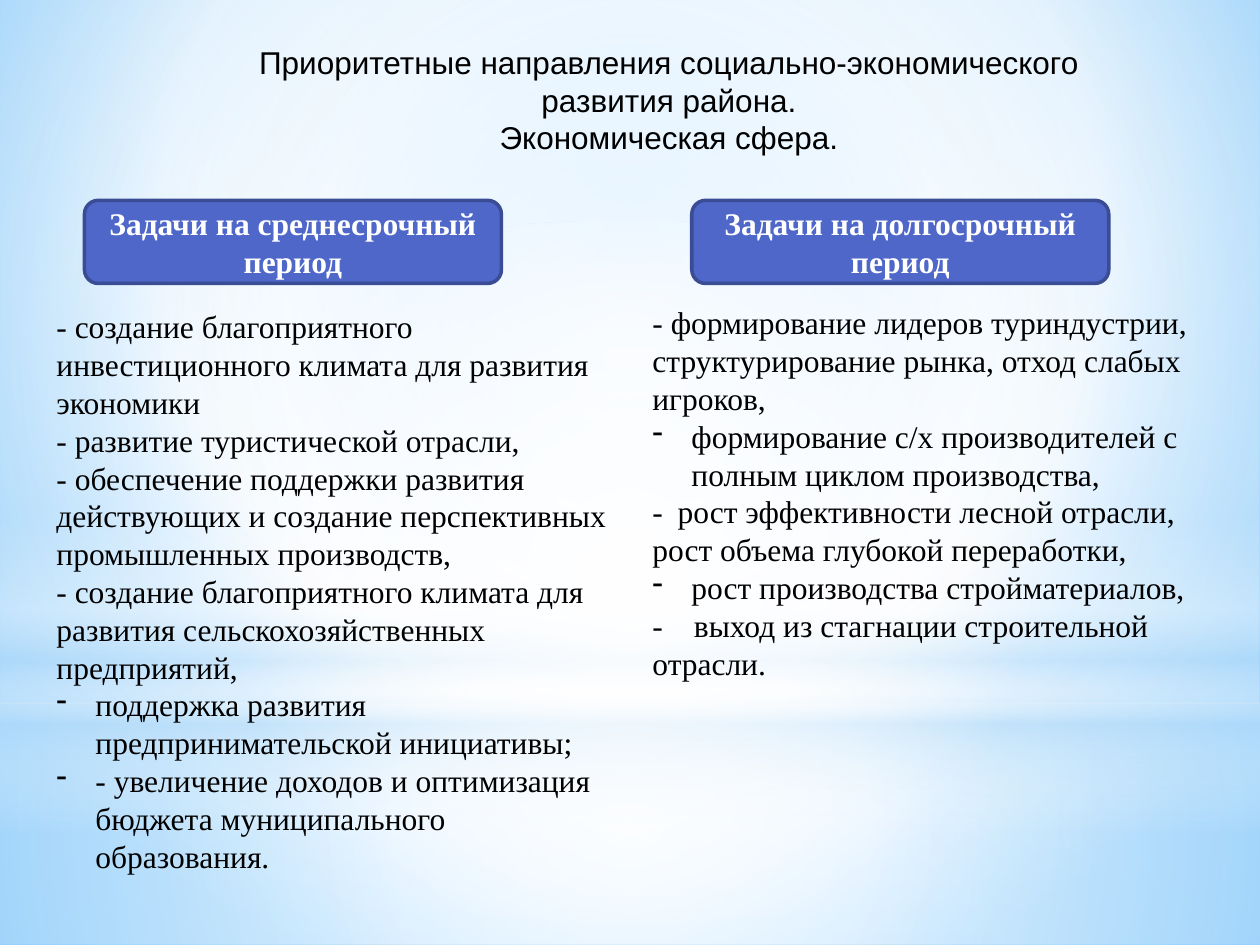
"""Build the slide on priority directions of the district's economic development."""
from dataclasses import dataclass
from typing import NamedTuple, Optional

from lxml.etree import SubElement
from pptx import Presentation
from pptx.dml.color import RGBColor
from pptx.enum.shapes import MSO_SHAPE as Preset
from pptx.enum.text import MSO_ANCHOR as Anchor, MSO_AUTO_SIZE as AutoSize, PP_ALIGN as Align
from pptx.oxml.ns import qn
from pptx.util import Inches, Pt


@dataclass(frozen=True)
class Theme:
    ink: str = "000000"
    white: str = "FFFFFF"
    sky: str = "B4DCFA"
    sky_light: str = "9ED5FF"
    sky_deep: str = "5BB9FF"
    header_fill: str = "4E67C8"
    header_line: str = "3A4C94"
    title_font: str = "Arial"
    body_font: str = "Times New Roman"
    size: int = 18


class Box(NamedTuple):
    left: float
    top: float
    width: float
    height: float


class Stop(NamedTuple):
    position: int
    color: str
    opacity: int = 100


class Gradient(NamedTuple):
    stops: tuple[Stop, ...]
    focus: Optional[tuple[int, int, int, int]] = (50, 50, 50, 50)


class Glow(NamedTuple):
    preset: Preset
    box: Box
    gradient: Gradient


class Task(NamedTuple):
    text: str
    bulleted: bool = False
    tab: Optional[float] = None


class Column(NamedTuple):
    header: str
    header_left: float
    box: Box
    tasks: tuple[Task, ...]


THEME = Theme()
HANGING = 0.31
BACKDROP = Gradient(
    (Stop(0, THEME.sky_light), Stop(60, THEME.white), Stop(100, THEME.sky_deep)),
    (20, 10, 20, 60),
)
GLOWS = (
    Glow(Preset.RECTANGLE, Box(0, 5.58, 10, 1.92), Gradient(
        (Stop(0, THEME.white, 91), Stop(37, THEME.white, 76), Stop(100, THEME.sky, 79)))),
    Glow(Preset.RECTANGLE, Box(0, 0, 10, 5.58), Gradient(
        (Stop(0, THEME.white, 89), Stop(48, THEME.white, 62), Stop(100, THEME.sky, 79)))),
    Glow(Preset.RECTANGLE, Box(0, 4.12, 10, 2.5), Gradient(
        (Stop(0, THEME.white, 0), Stop(29, THEME.white, 30), Stop(45, THEME.sky, 40),
         Stop(55, THEME.white, 26), Stop(65, THEME.sky, 60), Stop(100, THEME.white, 0)), None)),
    Glow(Preset.OVAL, Box(0, 1.75, 10, 5.58), Gradient(
        (Stop(0, THEME.white), Stop(56, THEME.white, 0)))),
)
TITLE = (
    "Приоритетные направления социально-экономического развития района.",
    "Экономическая сфера.",
)
COLUMNS = (
    Column("Задачи на среднесрочный период", 0.67, Box(0.35, 2.39, 4.57, 4.65), (
        Task("- создание благоприятного инвестиционного климата для развития экономики"),
        Task("- развитие туристической отрасли,"),
        Task("- обеспечение поддержки развития действующих и создание перспективных "
             "промышленных производств,"),
        Task("- создание благоприятного климата для развития сельскохозяйственных предприятий,"),
        Task("поддержка развития предпринимательской инициативы;", bulleted=True),
        Task("- увеличение доходов и оптимизация бюджета муниципального образования.",
             bulleted=True),
    )),
    Column("Задачи на долгосрочный период", 5.49, Box(5.08, 2.36, 4.76, 3.13), (
        Task("- формирование лидеров туриндустрии, структурирование рынка, отход слабых игроков,"),
        Task("формирование с/х производителей с полным циклом производства,", bulleted=True),
        Task("-\tрост эффективности лесной отрасли, рост объема глубокой переработки,", tab=0.2),
        Task("рост производства стройматериалов,", bulleted=True),
        Task("-\tвыход из стагнации строительной отрасли.", tab=0.33),
    )),
)


def lengths(box: Box) -> list[Inches]:
    """Convert a box to slide lengths."""
    return [Inches(value) for value in box]


def apply_gradient(properties, gradient: Gradient) -> None:
    """Turn the solid fill in the given properties into a gradient."""
    solid = properties.find(qn("a:solidFill"))
    fill = properties.makeelement(qn("a:gradFill"), {"rotWithShape": "1"})
    properties.replace(solid, fill)
    stop_list = SubElement(fill, qn("a:gsLst"))
    for stop in gradient.stops:
        mark = SubElement(stop_list, qn("a:gs"), pos=str(stop.position * 1000))
        color = SubElement(mark, qn("a:srgbClr"), val=stop.color)
        if stop.opacity < 100:
            SubElement(color, qn("a:alpha"), val=str(stop.opacity * 1000))
    if gradient.focus is None:
        SubElement(fill, qn("a:lin"), ang="5400000", scaled="0")
        return
    circle = SubElement(fill, qn("a:path"), path="circle")
    edges = {side: str(share * 1000) for side, share in zip("ltrb", gradient.focus)}
    SubElement(circle, qn("a:fillToRect"), edges)


def add_glow(slide, glow: Glow) -> None:
    """Draw one soft background layer."""
    layer = slide.shapes.add_shape(glow.preset, *lengths(glow.box))
    layer.shadow.inherit = False
    layer.line.fill.background()
    layer.fill.solid()
    apply_gradient(layer.element.spPr, glow.gradient)


def add_run(paragraph, text: str, font: str, color: str, bold: bool = False) -> None:
    """Append a formatted run."""
    run = paragraph.add_run()
    run.text = text
    run.font.name = font
    run.font.size = Pt(THEME.size)
    run.font.bold = bold
    run.font.color.rgb = RGBColor.from_string(color)


def add_text(slide, box: Box, tasks: tuple[Task, ...], font: str, align: Align) -> None:
    """Write paragraphs with optional hanging bullets or tab stops."""
    frame = slide.shapes.add_textbox(*lengths(box)).text_frame
    frame.word_wrap = True
    frame.auto_size = AutoSize.SHAPE_TO_FIT_TEXT
    for index, task in enumerate(tasks):
        paragraph = frame.add_paragraph() if index else frame.paragraphs[0]
        paragraph.alignment = align
        properties = paragraph._p.get_or_add_pPr()
        if task.bulleted:
            properties.set("marL", str(Inches(HANGING)))
            properties.set("indent", str(-Inches(HANGING)))
            SubElement(properties, qn("a:buFontTx"))
            SubElement(properties, qn("a:buChar"), char="-")
        if task.tab is not None:
            tabs = SubElement(properties, qn("a:tabLst"))
            SubElement(tabs, qn("a:tab"), pos=str(Inches(task.tab)), algn="l")
        add_run(paragraph, task.text, font, THEME.ink)


def add_column(slide, column: Column) -> None:
    """Draw a period header and its list of tasks."""
    add_text(slide, column.box, column.tasks, THEME.body_font, Align.LEFT)
    header = slide.shapes.add_shape(
        Preset.ROUNDED_RECTANGLE, *lengths(Box(column.header_left, 1.59, 3.31, 0.66)))
    header.shadow.inherit = False
    header.fill.solid()
    header.fill.fore_color.rgb = RGBColor.from_string(THEME.header_fill)
    header.line.color.rgb = RGBColor.from_string(THEME.header_line)
    header.line.width = Pt(2)
    frame = header.text_frame
    frame.word_wrap = True
    frame.vertical_anchor = Anchor.MIDDLE
    frame.paragraphs[0].alignment = Align.CENTER
    add_run(frame.paragraphs[0], column.header, THEME.body_font, THEME.white, bold=True)


def main() -> None:
    """Assemble and save the slide."""
    deck = Presentation()
    deck.slide_width, deck.slide_height = Inches(10), Inches(7.5)
    slide = deck.slides.add_slide(deck.slide_layouts[6])
    slide.background.fill.solid()
    apply_gradient(slide.element.find(".//" + qn("p:bgPr")), BACKDROP)
    for glow in GLOWS:
        add_glow(slide, glow)
    title = tuple(Task(line) for line in TITLE)
    add_text(slide, Box(1.61, 0.29, 7.4, 1.01), title, THEME.title_font, Align.CENTER)
    for column in COLUMNS:
        add_column(slide, column)
    deck.save("out.pptx")


if __name__ == "__main__":
    main()
